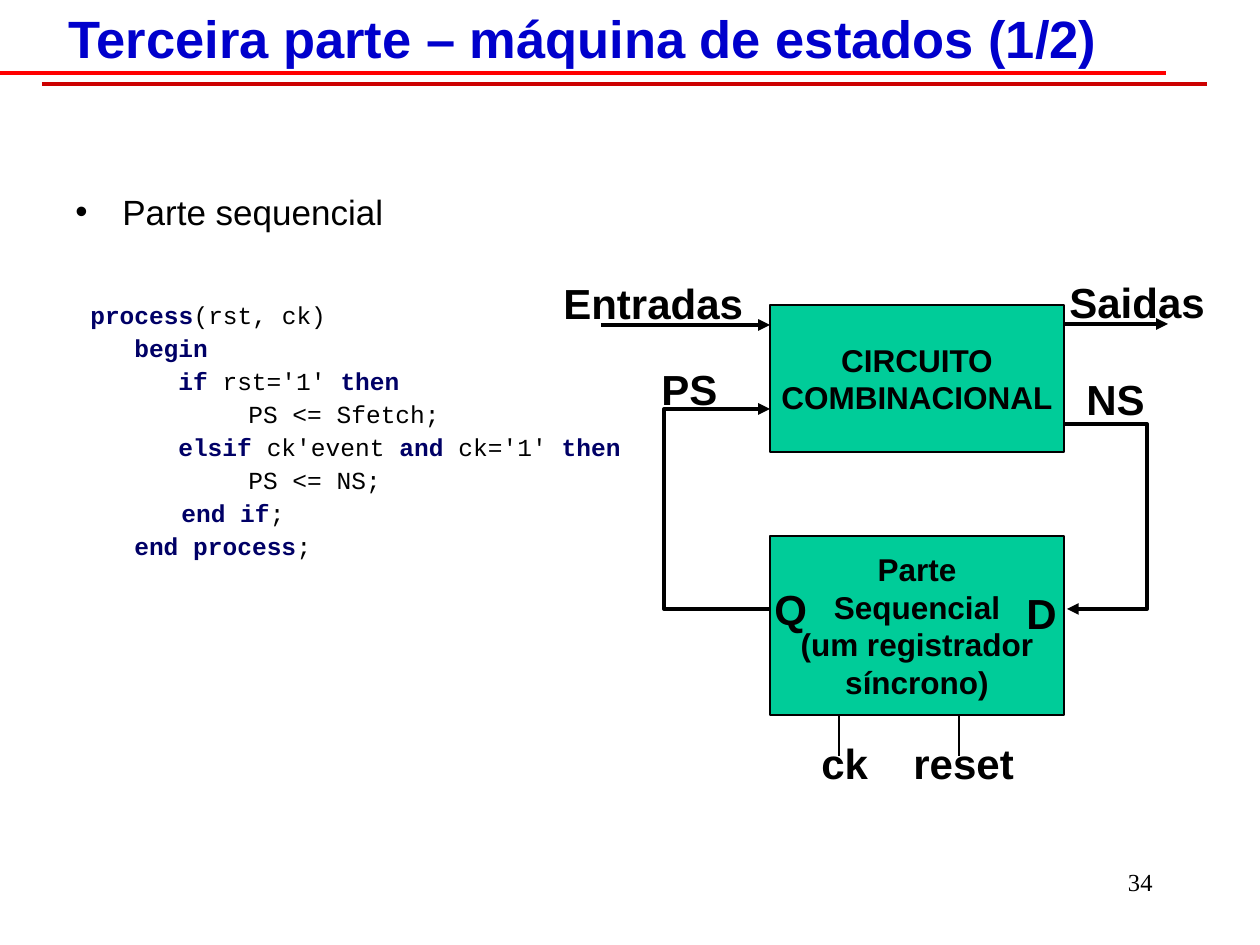
from dataclasses import dataclass

from lxml.etree import SubElement
from pptx import Presentation
from pptx.dml.color import RGBColor
from pptx.enum.shapes import MSO_CONNECTOR, MSO_SHAPE
from pptx.enum.text import MSO_ANCHOR, MSO_AUTO_SIZE, PP_ALIGN
from pptx.oxml.ns import qn
from pptx.util import Emu, Pt

SCALE = 914400 / 126  # EMU per px

BLACK = RGBColor(0x00, 0x00, 0x00)
RED = RGBColor(0xFF, 0x00, 0x00)
DARK_RED = RGBColor(0xCC, 0x00, 0x00)
TITLE_BLUE = RGBColor(0x00, 0x00, 0xCC)
KEYWORD_BLUE = RGBColor(0x00, 0x00, 0x66)
GREEN = RGBColor(0x00, 0xCC, 0x99)


@dataclass
class Block:
    text: str
    top: int
    height: int


@dataclass
class Label:
    text: str
    left: int
    top: int
    width: int


@dataclass
class Wire:
    start: tuple[int, int]
    end: tuple[int, int]
    color: RGBColor = BLACK
    weight: float = 2.25
    arrow: bool = False


@dataclass
class CodeLine:
    indent: int
    spans: list[tuple[str, bool]]  # text, is keyword


RULES = [
    Wire((0, 73), (1166, 73), RED),
    Wire((42, 84), (1207, 84), DARK_RED),
]
WIRES = [
    Wire((839, 714), (839, 756), weight=0.75),
    Wire((959, 714), (959, 756), weight=0.75),
    Wire((601, 325), (770, 325), arrow=True),
    Wire((1065, 324), (1168, 324), arrow=True),
]
LOOPS = [
    [(990, 424), (1147, 424), (1147, 609), (1067, 609)],
    [(844, 609), (664, 609), (664, 409), (770, 409)],
]
BLOCK_LEFT, BLOCK_WIDTH = 770, 294
BLOCKS = [
    Block("CIRCUITO\vCOMBINACIONAL", 305, 147),
    Block("Parte\vSequencial\n(um registrador\vsíncrono)", 536, 179),
]
LABELS = [
    Label("PS", 649, 357, 82),
    Label("NS", 1074, 367, 84),
    Label("ck", 809, 731, 72),
    Label("reset", 901, 731, 126),
    Label("D", 1014, 581, 55),
    Label("Q", 762, 577, 58),
    Label("Entradas", 551, 271, 207),
    Label("Saidas", 1057, 270, 163),
]
CODE = [
    CodeLine(15, [("process", True), ("(rst, ck)", False)]),
    CodeLine(59, [("begin", True)]),
    CodeLine(103, [("if ", True), ("rst='1' ", False), ("then", True)]),
    CodeLine(173, [("PS <= Sfetch;", False)]),
    CodeLine(103, [("elsif ", True), ("ck'event ", False), ("and ", True),
                   ("ck='1' ", False), ("then", True)]),
    CodeLine(173, [("PS <= NS;", False)]),
    CodeLine(106, [("end if", True), (";", False)]),
    CodeLine(59, [("end process", True), (";", False)]),
]


def px(value: float) -> Emu:
    return Emu(round(value * SCALE))


def format_span(span, *, size=24, font="Arial", color=BLACK, bold=False) -> None:
    span.font.size = Pt(size)
    span.font.name = font
    span.font.color.rgb = color
    span.font.bold = bold


def write(frame, text: str, *, align=PP_ALIGN.LEFT, anchor=MSO_ANCHOR.TOP,
          wrap=True, **style) -> None:
    """Fill a text frame; newline starts a paragraph, \\v breaks a line."""
    frame.word_wrap = wrap
    frame.auto_size = MSO_AUTO_SIZE.NONE
    frame.vertical_anchor = anchor
    for index, line in enumerate(text.split("\n")):
        para = frame.paragraphs[0] if index == 0 else frame.add_paragraph()
        para.text = line
        para.alignment = align
        for span in para.runs:
            format_span(span, **style)


def add_box(page, left: int, top: int, width: int, height: int):
    return page.shapes.add_textbox(px(left), px(top), px(width), px(height))


def set_line(shape, color: RGBColor, weight: float, arrow: bool) -> None:
    shape.line.color.rgb = color
    shape.line.width = Pt(weight)
    if arrow:
        SubElement(shape.line._get_or_add_ln(), qn("a:tailEnd"), type="triangle")


def draw_wire(page, wire: Wire) -> None:
    line = page.shapes.add_connector(
        MSO_CONNECTOR.STRAIGHT, *map(px, wire.start + wire.end))
    set_line(line, wire.color, wire.weight, wire.arrow)
    SubElement(line._element.spPr, qn("a:effectLst"))


def draw_loop(page, points: list[tuple[int, int]]) -> None:
    builder = page.shapes.build_freeform(*points[0], scale=SCALE)
    builder.add_line_segments(points[1:], close=False)
    loop = builder.convert_to_shape()
    loop.shadow.inherit = False
    loop.fill.background()
    set_line(loop, BLACK, 2.25, True)


def draw_block(page, block: Block) -> None:
    shape = page.shapes.add_shape(
        MSO_SHAPE.RECTANGLE, px(BLOCK_LEFT), px(block.top),
        px(BLOCK_WIDTH), px(block.height))
    shape.shadow.inherit = False
    shape.fill.solid()
    shape.fill.fore_color.rgb = GREEN
    set_line(shape, BLACK, 0.75, False)
    write(shape.text_frame, block.text, align=PP_ALIGN.CENTER,
          anchor=MSO_ANCHOR.MIDDLE, wrap=False, size=18, bold=True)


def draw_label(page, label: Label) -> None:
    box = add_box(page, label.left, label.top, label.width, 63)
    write(box.text_frame, label.text, wrap=False, bold=True)


def draw_body(page) -> None:
    frame = add_box(page, 63, 189, 1071, 567).text_frame
    write(frame, "Parte sequencial", size=20)
    heading = frame.paragraphs[0]
    heading.line_spacing = 0.9
    heading.space_before = Pt(4)
    properties = heading._p.get_or_add_pPr()
    properties.set("marL", str(px(47)))
    properties.set("indent", str(px(-47)))
    SubElement(properties, qn("a:buFont"), typeface="Arial")
    SubElement(properties, qn("a:buChar"), char="•")
    for index, line in enumerate(CODE):
        para = frame.add_paragraph()
        para.line_spacing = 0.9
        para.space_before = Pt(3.7 if index else 40)
        para._p.get_or_add_pPr().set("marL", str(px(line.indent)))
        for text, keyword in line.spans:
            span = para.add_run()
            span.text = text
            format_span(span, size=14, font="Courier New", bold=keyword,
                        color=KEYWORD_BLUE if keyword else BLACK)


def main() -> None:
    deck = Presentation()
    deck.slide_width, deck.slide_height = px(1260), px(945)
    page = deck.slides.add_slide(deck.slide_layouts[5])

    # Header rules, page number and title
    for rule in RULES:
        draw_wire(page, rule)
    write(add_box(page, 903, 861, 262, 63).text_frame, "34",
          align=PP_ALIGN.RIGHT, size=14, font="Times New Roman")
    title = page.shapes.title
    title.left, title.top, title.width, title.height = map(px, (0, 1, 1166, 73))
    write(title.text_frame, "Terceira parte – máquina de estados (1/2)",
          align=PP_ALIGN.CENTER, anchor=MSO_ANCHOR.MIDDLE,
          size=30, color=TITLE_BLUE, bold=True)

    # Bullet and code listing
    draw_body(page)

    # State machine diagram
    for points in LOOPS:
        draw_loop(page, points)
    for block in BLOCKS:
        draw_block(page, block)
    for wire in WIRES:
        draw_wire(page, wire)
    for label in LABELS:
        draw_label(page, label)

    deck.save("out.pptx")


if __name__ == "__main__":
    main()
